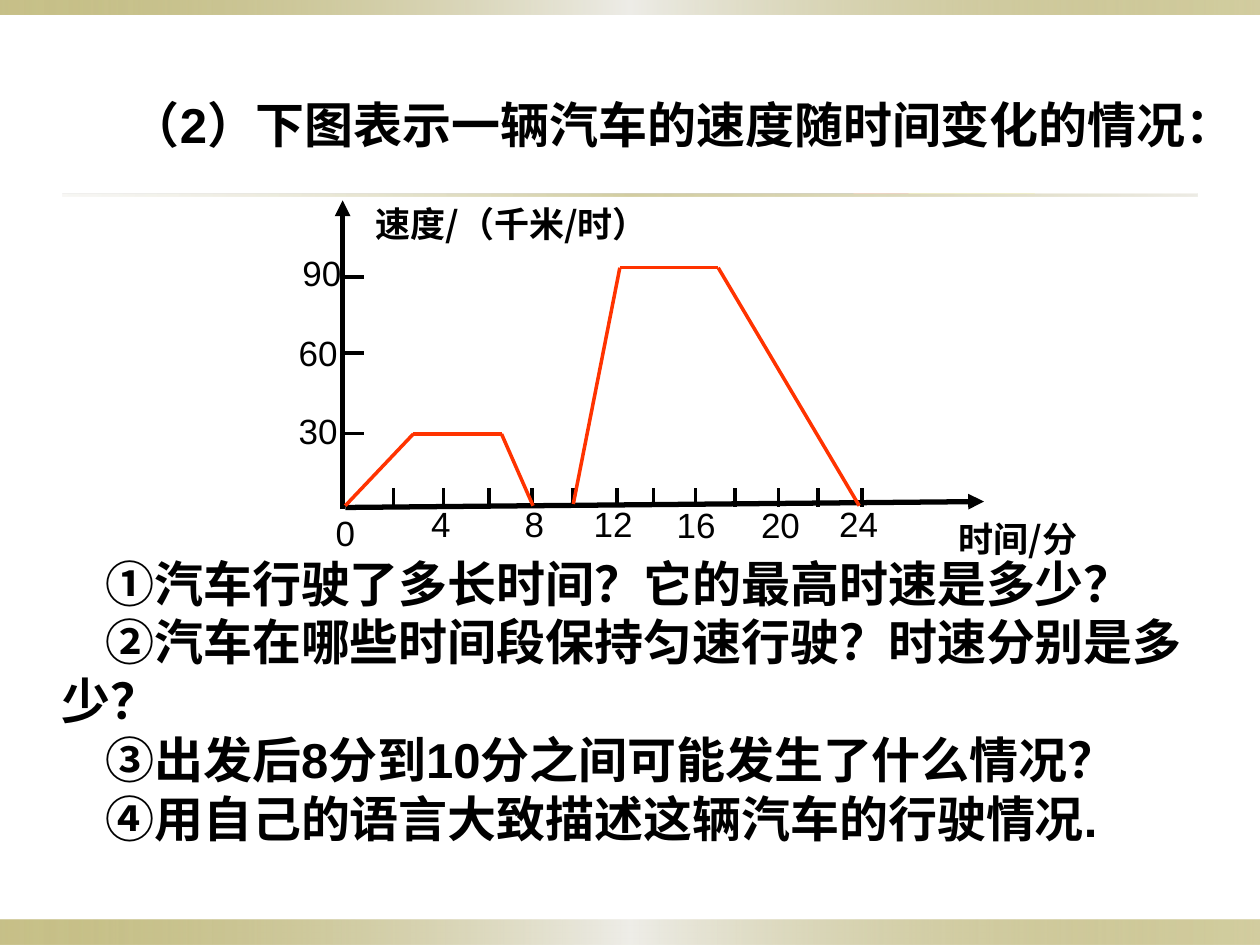
import itertools

import lxml.etree
import pptx
import pptx.dml.color
import pptx.enum.dml
import pptx.enum.shapes
import pptx.enum.text
import pptx.oxml.ns
import pptx.util

COLOURS = {
    "background": "FFFFFF",
    "ink": "000000",
    "curve": "FF3300",
    "olive": "918415",
    "silver": "EEEDE8",
    "sand": "DCD9CC",
}
LATIN_FONT = "Arial"
CHINESE_FONT = "Noto Sans CJK SC"

# Gradient stops: position, colour, opacity (all in percent)
BAND_STOPS = [(0, "olive", 50), (50, "silver", 100), (100, "olive", 40)]
RULE_STOPS = [(0, "sand", 20), (50, "olive", 40), (100, "sand", 50)]

TITLE = "（2）下图表示一辆汽车的速度随时间变化的情况："
QUESTIONS = [
    "①汽车行驶了多长时间？它的最高时速是多少？",
    "②汽车在哪些时间段保持匀速行驶？时速分别是多少？",
    "③出发后8分到10分之间可能发生了什么情况？",
    "④用自己的语言大致描述这辆汽车的行驶情况.",
]

TIME_TICKS = [225, 253.5, 279.5, 304, 327.5, 352.5, 373.5, 397.5, 420, 445, 467.5, 492.5]
# Label: centre, top
TIME_LABELS = {
    "0": (197.3, 288.7), "4": (252, 283.7), "8": (305.3, 283.7), "12": (350.3, 283.7),
    "16": (397.8, 284.4), "20": (446, 284.4), "24": (490.7, 283.7),
}
# Label: centre, top, height of its tick
SPEED_LABELS = {
    "90": (184, 140.4, 158.4), "60": (181.8, 185.8, 201.6), "30": (181.8, 230.4, 247.7),
}
SPEED_CURVES = [
    [(197.3, 289), (236.2, 248), (286.6, 248), (304.6, 289)],
    [(327.6, 288), (354.2, 153), (410.4, 153), (491, 289)],
]


def colour(name):
    return pptx.dml.color.RGBColor.from_string(COLOURS[name])


def add_element(parent, tag, **attributes):
    return lxml.etree.SubElement(parent, pptx.oxml.ns.qn(tag), attributes)


class SlideBuilder:
    def __init__(self, slide):
        self.slide = slide
        background = slide.background.fill
        background.solid()
        background.fore_color.rgb = colour("background")

    def band(self, left, top, width, height, stops):
        """Add a borderless bar with a horizontal, partly transparent gradient."""
        shape = self.slide.shapes.add_shape(
            pptx.enum.shapes.MSO_SHAPE.RECTANGLE,
            *map(pptx.util.Pt, (left, top, width, height)))
        shape.shadow.inherit = False
        shape.line.fill.background()
        shape.fill.gradient()
        shape.fill.gradient_angle = 0
        stop_list = shape.element.spPr.find(".//" + pptx.oxml.ns.qn("a:gsLst"))
        for old_stop in list(stop_list):
            stop_list.remove(old_stop)
        for position, name, opacity in stops:
            stop = add_element(stop_list, "a:gs", pos=str(position * 1000))
            rgb = add_element(stop, "a:srgbClr", val=COLOURS[name])
            add_element(rgb, "a:alpha", val=str(opacity * 1000))

    def text(self, paragraphs, left, top, width, height, size=28, bold=True,
             font=LATIN_FONT, centred=False, wrap=True, first_indent=0):
        box = self.slide.shapes.add_textbox(
            *map(pptx.util.Pt, (left, top, width, height)))
        frame = box.text_frame
        frame.word_wrap = wrap
        frame.auto_size = pptx.enum.text.MSO_AUTO_SIZE.SHAPE_TO_FIT_TEXT
        frame.text = "\n".join(paragraphs)
        for paragraph in frame.paragraphs:
            if centred:
                paragraph.alignment = pptx.enum.text.PP_ALIGN.CENTER
            if first_indent:
                properties = paragraph._p.get_or_add_pPr()
                properties.set("marL", "0")
                properties.set("indent", str(pptx.util.Pt(first_indent)))
            for run in paragraph.runs:
                run.font.size = pptx.util.Pt(size)
                run.font.bold = bold
                run.font.name = font
                run.font.color.rgb = colour("ink")
                add_element(run.font._element, "a:ea", typeface=CHINESE_FONT)

    def number(self, label, centre, top):
        width = 26 if len(label) == 1 else 37
        self.text([label], centre - width / 2, top, width, 31.5,
                  size=20, bold=False, centred=True, wrap=False)

    def axis_title(self, label, left, top, width):
        self.text([label], left, top, width, 31.5,
                  size=20, font=CHINESE_FONT, centred=True)

    def line(self, start, end, name="ink", width=2, arrow=False):
        connector = self.slide.shapes.add_connector(
            pptx.enum.shapes.MSO_CONNECTOR.STRAIGHT,
            *map(pptx.util.Pt, (*start, *end)))
        connector.line.color.rgb = colour(name)
        connector.line.width = pptx.util.Pt(width)
        if arrow:
            add_element(connector.line._get_or_add_ln(), "a:tailEnd", type="triangle")
        add_element(connector._element.spPr, "a:effectLst")

    def polyline(self, points, name):
        for start, end in itertools.pairwise(points):
            self.line(start, end, name)


def main():
    presentation = pptx.Presentation()
    presentation.slide_width = pptx.util.Pt(720)
    presentation.slide_height = pptx.util.Pt(540)
    builder = SlideBuilder(presentation.slides.add_slide(presentation.slide_layouts[6]))

    builder.band(0, 525.6, 720, 14.4, BAND_STOPS)
    builder.band(0, 0, 720, 8.6, BAND_STOPS)
    builder.band(36, 110.9, 648, 1.5, RULE_STOPS)

    builder.text([TITLE], 67.7, 50.4, 630, 41)
    builder.text(QUESTIONS, 28.1, 312.5, 658, 177, first_indent=25)

    builder.line((197.3, 290), (562.3, 286.6), width=3, arrow=True)
    builder.line((195.8, 290.9), (195.8, 114.5), width=3, arrow=True)
    builder.axis_title("时间/分", 528.5, 292.3, 106.6)
    builder.axis_title("速度/（千米/时）", 196.6, 112.3, 191.5)

    for x in TIME_TICKS:
        builder.line((x, 279), (x, 290))
    for label, (centre, top) in TIME_LABELS.items():
        builder.number(label, centre, top)
    for label, (centre, top, tick) in SPEED_LABELS.items():
        builder.line((208, tick), (196.5, tick))
        builder.number(label, centre, top)
    for points in SPEED_CURVES:
        builder.polyline(points, "curve")

    presentation.save("out.pptx")


if __name__ == "__main__":
    main()
